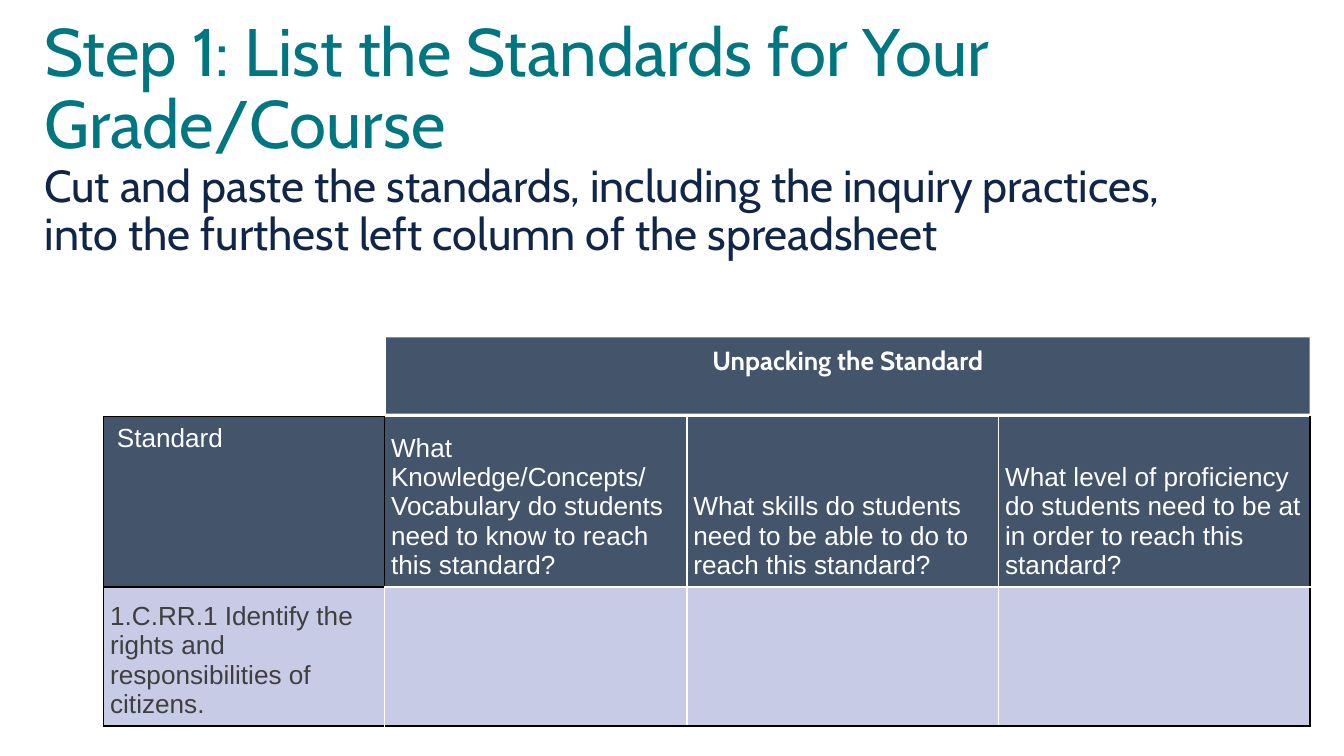
from pptx import Presentation
from pptx.dml.color import RGBColor as Rgb
from pptx.enum.shapes import MSO_SHAPE as Form
from pptx.enum.text import MSO_ANCHOR as Anchor, PP_ALIGN as Align
from pptx.oxml.ns import qn
from pptx.util import Pt
from lxml.etree import SubElement as Sub

HUES = {"teal": "007780", "navy": "102649", "slate": "44546A", "lilac": "C8CBE6",
        "white": "FFFFFF", "black": "000000", "gray": "3F3F3F"}
SIDES = {"l": "a:lnL", "r": "a:lnR", "t": "a:lnT", "b": "a:lnB"}
HEADS = ["Standard",
         "What Knowledge/Concepts/ Vocabulary do students need to know to reach this standard?",
         "What skills do students need to be able to do to reach this standard?",
         "What level of proficiency do students need to be at in order to reach this standard?"]
GOAL = "1.C.RR.1 Identify the rights and responsibilities of citizens."


class Deck:
    """Hold the style and the current slide, and add elements to it."""

    def __init__(self, wide, high):
        self.show = Presentation()
        self.show.slide_width, self.show.slide_height = Pt(wide), Pt(high)
        self.slide = self.show.slides.add_slide(self.show.slide_layouts[6])

    def hue(self, name):
        return Rgb.from_string(HUES[name])

    def inset(self, item, side, top):
        item.margin_left = item.margin_right = Pt(side)
        item.margin_top = item.margin_bottom = Pt(top)

    def label(self, frame, text, size, face, hue, bold=False):
        frame.word_wrap = True
        para = frame.paragraphs[0]
        para.text = text
        font = para.font
        font.size, font.name, font.bold = Pt(size), face, bold
        font.color.rgb = self.hue(hue)
        return para

    def text(self, box, text, size, hue):
        frame = self.slide.shapes.add_textbox(*map(Pt, box)).text_frame
        self.inset(frame, 5.2, 2.6)
        self.label(frame, text, size, "Cabin", hue).line_spacing = 0.9

    def banner(self, box, text):
        shape = self.slide.shapes.add_shape(Form.RECTANGLE, *map(Pt, box))
        shape.shadow.inherit = False
        shape.fill.solid()
        shape.fill.fore_color.rgb = self.hue("slate")
        shape.line.fill.background()
        frame = shape.text_frame
        frame.vertical_anchor = Anchor.TOP
        para = self.label(frame, text, 14, "Cabin", "white", True)
        para.alignment = Align.CENTER

    def border(self, cell, dark):
        props = cell._tc.get_or_add_tcPr()
        for side, tag in SIDES.items():
            line = Sub(props, qn(tag), w=str(Pt(1)))
            fill = Sub(line, qn("a:solidFill"))
            Sub(fill, qn("a:srgbClr"), val=HUES["black" if side in dark else "white"])

    def cell(self, cell, text, hue, fill, dark):
        self.border(cell, dark)
        cell.fill.solid()
        cell.fill.fore_color.rgb = self.hue(fill)
        if text != "Standard":
            self.inset(cell, 3.6, 3.6)
            cell.vertical_anchor = Anchor.BOTTOM
        self.label(cell.text_frame, text, 14, "Arial", hue)

    def table(self, box, cols, rows, data):
        grid = self.slide.shapes.add_table(len(rows), len(cols), *map(Pt, box)).table
        for col, wide in zip(grid.columns, cols):
            col.width = Pt(wide)
        for row, high in zip(grid.rows, rows):
            row.height = Pt(high)
        last = len(cols) - 1
        for y, (texts, hue, fill) in enumerate(data):
            for x, text in enumerate(texts):
                dark = {0: "l", last: "r"}.get(x, "") + ("b" if y else "")
                if x == y == 0:
                    dark = "lrtb"
                elif (x, y) == (0, 1):
                    dark += "t"
                elif (x, y) == (1, 0):
                    dark += "l"
                self.cell(grid.cell(y, x), text, hue, fill, dark)


def main():
    deck = Deck(720, 405)
    deck.text((18.7, 7.2, 661.7, 77.8), "Step 1: List the Standards for Your Grade/Course", 36, "teal")
    deck.text((18.7, 85, 620.6, 289.4),
              "Cut and paste the standards, including the inquiry practices, "
              "into the furthest left column of the spreadsheet", 24, "navy")
    deck.table((55.4, 223.2, 646.6, 165.6), (150.5, 162, 167, 167), (64, 40),
               [(HEADS, "white", "slate"), ([GOAL, "", "", ""], "gray", "lilac")])
    deck.banner((206.8, 180.7, 494.8, 41), "Unpacking the Standard")
    deck.show.save("out.pptx")


if __name__ == "__main__":
    main()
